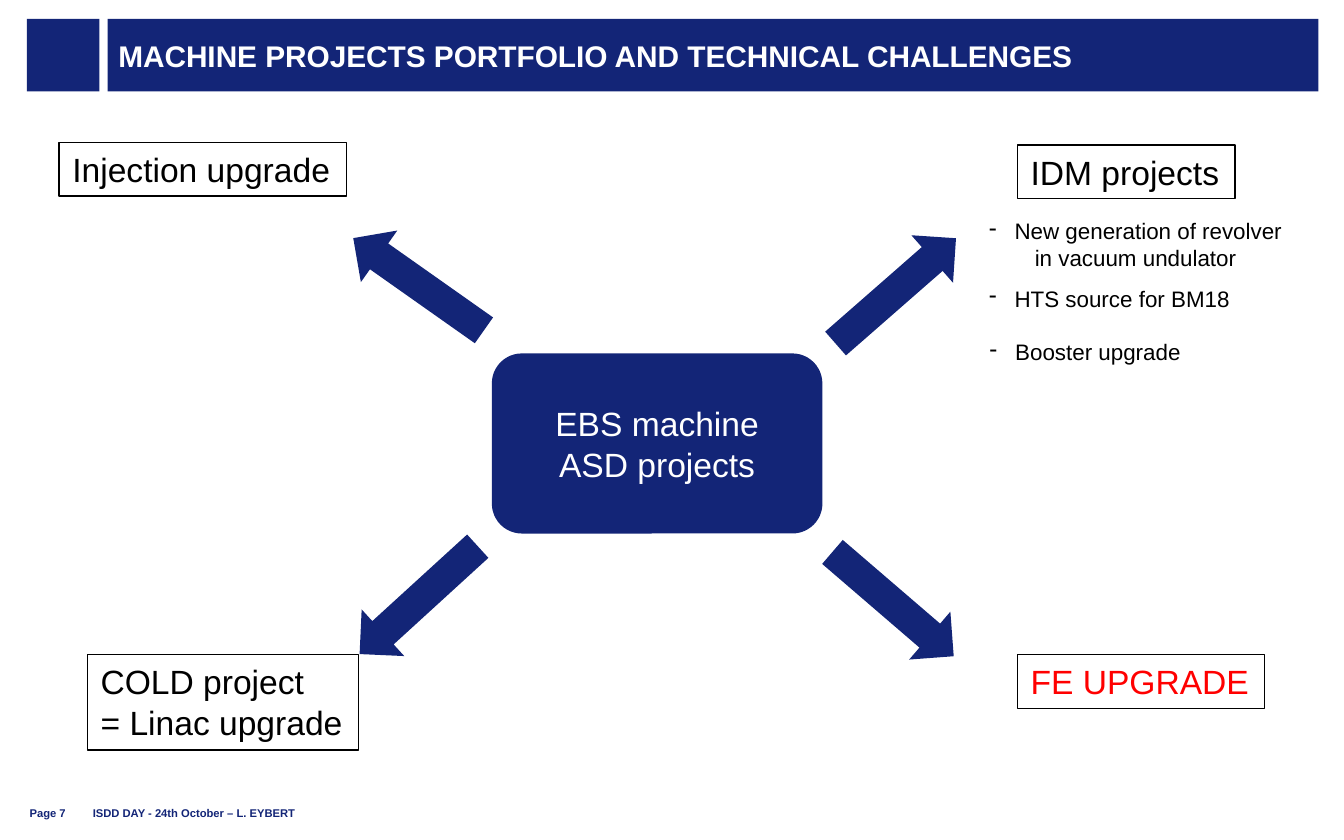
import dataclasses

import lxml.etree
import pptx
import pptx.dml.color
import pptx.enum.shapes
import pptx.enum.text
import pptx.oxml.ns
import pptx.util

Inches = pptx.util.Inches
Shape = pptx.enum.shapes.MSO_SHAPE
Align = pptx.enum.text.PP_ALIGN
Anchor = pptx.enum.text.MSO_ANCHOR
AutoSize = pptx.enum.text.MSO_AUTO_SIZE


@dataclasses.dataclass(frozen=True)
class Theme:
    font: str = "Arial"
    navy: str = "132577"
    white: str = "FFFFFF"
    black: str = "000000"
    red: str = "FF0000"
    title_size: int = 16
    label_size: int = 18
    list_size: int = 12
    footer_size: int = 6


class PortfolioPage:
    """Draws the elements of the page in one theme."""

    def __init__(self, page, theme):
        self.page = page
        self.theme = theme

    def color(self, code):
        return pptx.dml.color.RGBColor.from_string(code)

    def set_text(self, box, text, size, color, bold=False, align=Align.LEFT, anchor=Anchor.TOP):
        frame = box.text_frame
        frame.text = text
        frame.vertical_anchor = anchor
        for para in frame.paragraphs:
            para.alignment = align
            for span in para.runs:
                span.font.name = self.theme.font
                span.font.size = pptx.util.Pt(size)
                span.font.bold = bold
                span.font.color.rgb = self.color(color)
        return frame

    def margins(self, frame, side):
        frame.margin_left = frame.margin_right = Inches(side)
        frame.margin_top = frame.margin_bottom = 0

    def fill(self, box):
        box.fill.solid()
        box.fill.fore_color.rgb = self.color(self.theme.navy)

    def block(self, kind, left, top, width, height):
        box = self.page.shapes.add_shape(
            kind, Inches(left), Inches(top), Inches(width), Inches(height))
        box.shadow.inherit = False
        self.fill(box)
        box.line.fill.background()
        return box

    def title(self, text, left, top, width, height):
        box = self.page.shapes.title
        box.left, box.top = Inches(left), Inches(top)
        box.width, box.height = Inches(width), Inches(height)
        self.fill(box)
        frame = self.set_text(box, text, self.theme.title_size, self.theme.white,
                              bold=True, anchor=Anchor.MIDDLE)
        self.margins(frame, 0.08)
        frame.auto_size = AutoSize.NONE

    def hub(self, text, left, top, width, height):
        box = self.block(Shape.ROUNDED_RECTANGLE, left, top, width, height)
        self.set_text(box, text, self.theme.label_size, self.theme.white,
                      align=Align.CENTER, anchor=Anchor.MIDDLE)

    def arrow(self, left, top, angle):
        self.block(Shape.RIGHT_ARROW, left, top, 1.19, 0.47).rotation = angle

    def label(self, text, left, top, width, height, color):
        box = self.block(Shape.RECTANGLE, left, top, width, height)
        box.fill.background()
        box.line.color.rgb = self.color(self.theme.black)
        box.line.width = pptx.util.Pt(0.75)
        frame = self.set_text(box, text, self.theme.label_size, color)
        frame.word_wrap = False
        frame.auto_size = AutoSize.SHAPE_TO_FIT_TEXT

    def text_box(self, left, top, width, height):
        return self.page.shapes.add_textbox(
            Inches(left), Inches(top), Inches(width), Inches(height))

    def dash_item(self, text, left, top, width, height):
        box = self.text_box(left, top, width, height)
        frame = self.set_text(box, text, self.theme.list_size, self.theme.black,
                              align=Align.CENTER)
        frame.word_wrap = False
        frame.auto_size = AutoSize.SHAPE_TO_FIT_TEXT
        properties = frame.paragraphs[0]._p.get_or_add_pPr()
        properties.set("marL", str(Inches(0.19)))
        properties.set("indent", str(-Inches(0.19)))
        bullet = lxml.etree.SubElement(properties, pptx.oxml.ns.qn("a:buChar"))
        bullet.set("char", "-")

    def footer(self, text, left, width):
        box = self.text_box(left, 5.91, width, 0.19)
        frame = self.set_text(box, text, self.theme.footer_size, self.theme.navy,
                              bold=True, anchor=Anchor.BOTTOM)
        self.margins(frame, 0)
        frame.word_wrap = True


def main():
    theme = Theme()
    deck = pptx.Presentation()
    deck.slide_width, deck.slide_height = Inches(10), Inches(6.25)
    page = PortfolioPage(deck.slides.add_slide(deck.slide_layouts[5]), theme)

    page.block(Shape.RECTANGLE, 0.2, 0.14, 0.54, 0.54)
    page.title("MACHINE PROJECTS PORTFOLIO AND TECHNICAL CHALLENGES", 0.8, 0.14, 9.01, 0.54)
    page.footer("Page 7", 0.22, 0.45)
    page.footer("ISDD DAY - 24th October – L. EYBERT", 0.69, 6.69)
    page.hub("EBS machine\nASD projects", 3.66, 2.63, 2.46, 1.34)

    for left, top, angle in (
        (6.07, 1.93, 318.8),
        (2.52, 1.88, 215.2),
        (2.52, 4.23, 137.6),
        (6.05, 4.26, 40.7),
    ):
        page.arrow(left, top, angle)

    for text, left, top, width, height, color in (
        ("IDM projects", 7.57, 1.08, 1.62, 0.4, theme.black),
        ("Injection upgrade", 0.44, 1.06, 2.14, 0.4, theme.black),
        ("COLD project\n= Linac upgrade", 0.65, 4.87, 2.02, 0.71, theme.black),
        ("FE UPGRADE", 7.57, 4.87, 1.84, 0.4, theme.red),
    ):
        page.label(text, left, top, width, height, color)

    for text, left, top, width, height in (
        ("New generation of revolver\nin vacuum undulator", 7.23, 1.57, 2.44, 0.5),
        ("HTS source for BM18", 7.25, 2.07, 2.01, 0.3),
        ("Booster upgrade", 7.26, 2.47, 1.63, 0.3),
    ):
        page.dash_item(text, left, top, width, height)

    deck.save("out.pptx")


if __name__ == "__main__":
    main()
